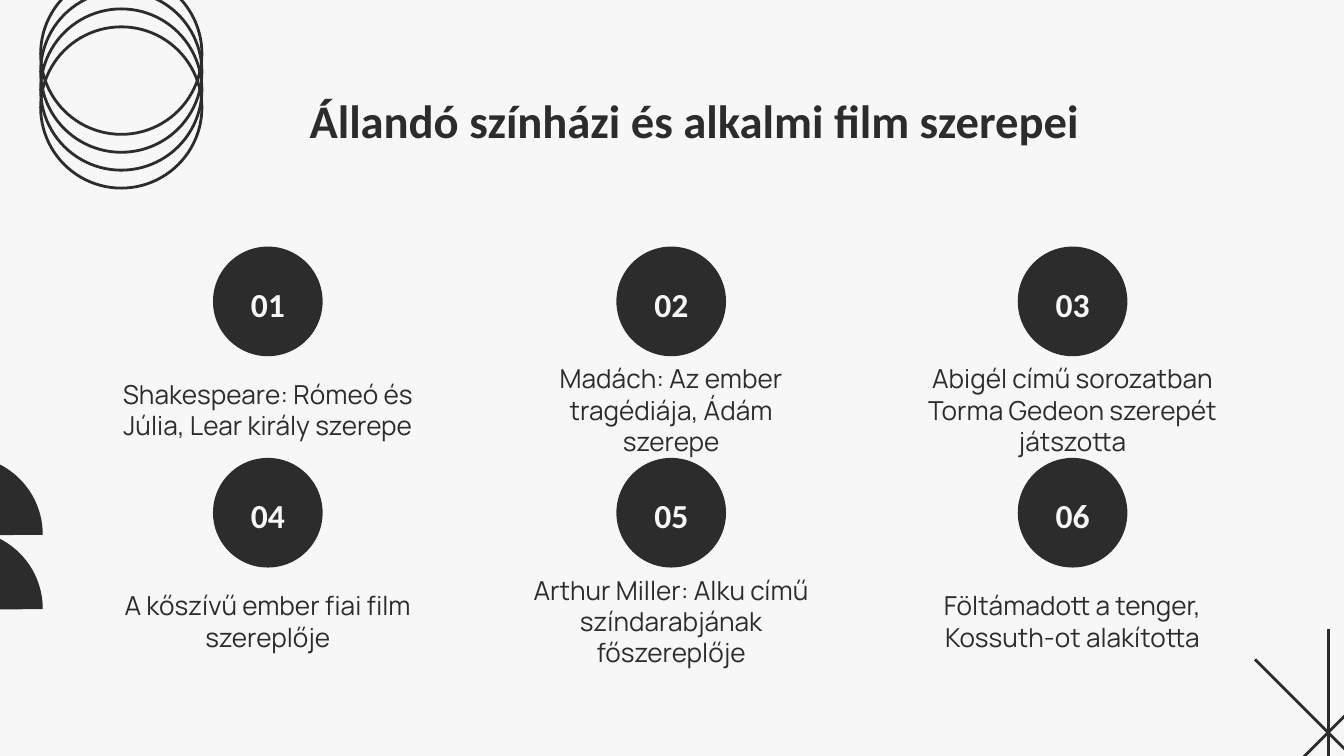
"""Build a slide listing an actor's stage and film roles under six numbered circles."""
from math import cos, radians, sin

from lxml import etree
from pptx import Presentation
from pptx.dml.color import RGBColor
from pptx.enum.shapes import MSO_CONNECTOR, MSO_SHAPE
from pptx.enum.text import MSO_ANCHOR, MSO_AUTO_SIZE, PP_ALIGN
from pptx.oxml.ns import qn
from pptx.util import Pt

OVAL, PIE, STRAIGHT = MSO_SHAPE.OVAL, MSO_SHAPE.PIE, MSO_CONNECTOR.STRAIGHT
TOP, MIDDLE, CENTER = MSO_ANCHOR.TOP, MSO_ANCHOR.MIDDLE, PP_ALIGN.CENTER

TITLE = "Állandó színházi és alkalmi film szerepei"
ROLES = [
    "Shakespeare: Rómeó és Júlia, Lear király szerepe",
    "Madách: Az ember tragédiája, Ádám szerepe",
    "Abigél című sorozatban Torma Gedeon szerepét játszotta",
    "A kőszívű ember fiai film szereplője",
    "Arthur Miller: Alku című színdarabjának főszereplője",
    "Föltámadott a tenger, Kossuth-ot alakította",
]

DARK, LIGHT = RGBColor(0x2C, 0x2C, 0x2C), RGBColor(0xF7, 0xF7, 0xF7)
THEME = {
    "background": LIGHT,
    "ink": DARK,
    "outline": 1.5,
    "edge": 0.75,
    "inset": 7.2,
    "title": {"name": "Calibri", "size": Pt(25), "bold": True, "color": DARK},
    "number": {"name": "Calibri", "size": Pt(18), "bold": True, "color": LIGHT},
    "caption": {"name": "Manrope", "size": Pt(14), "bold": False, "color": DARK},
}

SLIDE_SIZE = (720, 405)
TITLE_BOX = (51.1, 37.4, 641.5, 73.4)
COLUMNS = [(143.5, 173.5), (359.6, 162.7), (574.6, 178.6)]
ROW_TOP, ROW_PITCH = 132.5, 113.2
CIRCLE_SIZE = 58
NUMBER_DROP, NUMBER_WIDTH, NUMBER_HEIGHT = 13.5, 70.6, 33.8
CAPTION_DROP, CAPTION_HEIGHT = 61.4, 51.1

RING_LEFT, RING_TOP, RING_SIZE, RING_STEP, RING_COUNT = 21.8, -14.4, 86.4, 9.6, 4
DOME_LEFT, DOME_TOP, DOME_SIZE, DOME_STEP, DOME_COUNT = -61, 244.6, 83.5, 39.8, 2
STAR_X, STAR_Y, STAR_RADIUS = 711.5, 392.4, 55.4
STAR_ANGLES = (-90, 90, 135, 45)


def add_figure(slide, kind, box, edge, filled):
    shape = slide.shapes.add_shape(kind, *map(Pt, box))
    shape.shadow.inherit = False
    if filled:
        shape.fill.solid()
        shape.fill.fore_color.rgb = THEME["ink"]
    else:
        shape.fill.background()
    shape.line.color.rgb = THEME["ink"]
    shape.line.width = Pt(edge)
    return shape


def add_spoke(slide, angle):
    across = STAR_RADIUS * cos(radians(angle))
    down = STAR_RADIUS * sin(radians(angle))
    ends = (STAR_X + across, STAR_Y + down, STAR_X - across, STAR_Y - down)
    spoke = slide.shapes.add_connector(STRAIGHT, *map(Pt, ends))
    spoke.line.color.rgb = THEME["ink"]
    spoke.line.width = Pt(THEME["outline"])
    etree.SubElement(spoke.element.spPr, qn("a:effectLst"))


def set_text(shape, text, style, anchor, line_spacing=1.0):
    frame = shape.text_frame
    frame_format = {"word_wrap": True, "auto_size": MSO_AUTO_SIZE.NONE, "vertical_anchor": anchor}
    for side in ("left", "top", "right", "bottom"):
        frame_format[f"margin_{side}"] = Pt(THEME["inset"])
    for name, value in frame_format.items():
        setattr(frame, name, value)
    frame.text = text
    paragraph = frame.paragraphs[0]
    paragraph.alignment = CENTER
    paragraph.line_spacing = line_spacing
    font = paragraph.runs[0].font
    for name, value in THEME[style].items():
        if name == "color":
            font.color.rgb = value
        else:
            setattr(font, name, value)


def add_label(slide, center, top, width, height, text, style):
    box = (center - width / 2, top, width, height)
    set_text(slide.shapes.add_textbox(*map(Pt, box)), text, style, MIDDLE)


def add_decoration(slide):
    for angle in STAR_ANGLES:
        add_spoke(slide, angle)
    for index in range(RING_COUNT):
        box = (RING_LEFT, RING_TOP + index * RING_STEP, RING_SIZE, RING_SIZE)
        add_figure(slide, OVAL, box, THEME["outline"], False)
    for index in range(DOME_COUNT):
        box = (DOME_LEFT, DOME_TOP + index * DOME_STEP, DOME_SIZE, DOME_SIZE)
        dome = add_figure(slide, PIE, box, THEME["edge"], True)
        dome.rotation = 180
        dome.adjustments[0], dome.adjustments[1] = 0, 107.85


def add_role(slide, index, role):
    row, column = divmod(index, len(COLUMNS))
    center, caption_width = COLUMNS[column]
    top = ROW_TOP + row * ROW_PITCH
    circle_box = (center - CIRCLE_SIZE / 2, top, CIRCLE_SIZE, CIRCLE_SIZE)
    add_figure(slide, OVAL, circle_box, THEME["edge"], True)
    add_label(slide, center, top + NUMBER_DROP, NUMBER_WIDTH, NUMBER_HEIGHT,
              f"{index + 1:02d}", "number")
    add_label(slide, center, top + CAPTION_DROP, caption_width, CAPTION_HEIGHT, role, "caption")


def main():
    presentation = Presentation()
    presentation.slide_width, presentation.slide_height = map(Pt, SLIDE_SIZE)
    slide = presentation.slides.add_slide(presentation.slide_layouts[5])
    slide.background.fill.solid()
    slide.background.fill.fore_color.rgb = THEME["background"]
    add_decoration(slide)
    title = slide.shapes.title
    for name, value in zip(("left", "top", "width", "height"), TITLE_BOX):
        setattr(title, name, Pt(value))
    set_text(title, TITLE, "title", TOP, 1.15)
    for index, role in enumerate(ROLES):
        add_role(slide, index, role)
    presentation.save("out.pptx")


if __name__ == "__main__":
    main()
